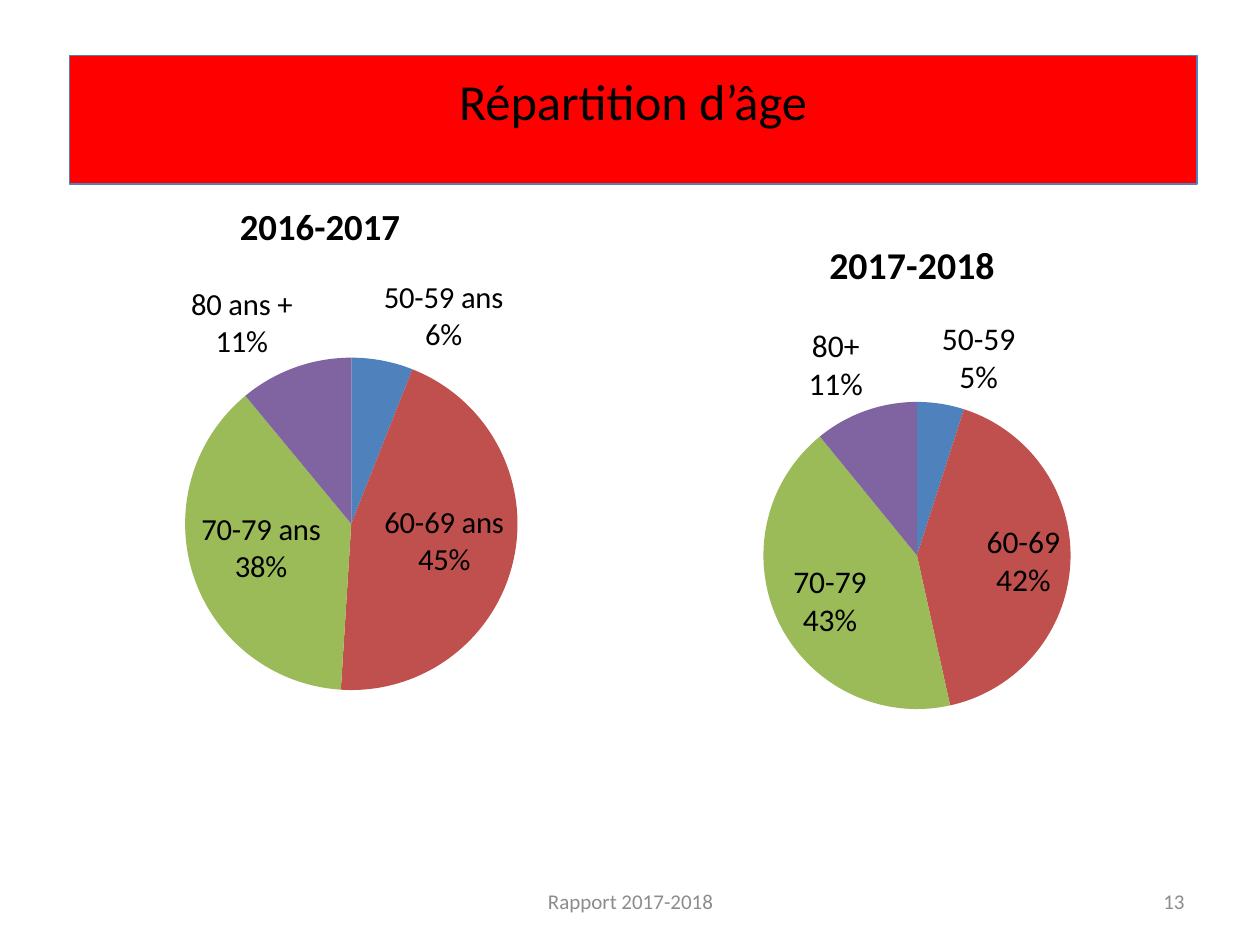
from lxml import etree
from pptx import Presentation
from pptx.chart.data import CategoryChartData
from pptx.dml.color import RGBColor
from pptx.enum import chart as ch, shapes, text
from pptx.oxml.ns import qn
from pptx.util import Inches, Pt

FONT = "Calibri"
BLACK = RGBColor(0x00, 0x00, 0x00)
GREY = RGBColor(0x8C, 0x8C, 0x8C)
RED = RGBColor(0xFF, 0x00, 0x00)
BLUE = RGBColor(0x4F, 0x81, 0xBD)
SLICES = [BLUE, RGBColor(0xC0, 0x50, 0x4D),
          RGBColor(0x9B, 0xBB, 0x59), RGBColor(0x80, 0x64, 0xA2)]


def style_font(font, size, color, bold=False):
    font.name, font.size, font.bold = FONT, Pt(size), bold
    font.color.rgb = color


def add_text(sp, content, size, color, align):
    tf = sp.text_frame
    tf.word_wrap = True
    tf.vertical_anchor = text.MSO_ANCHOR.MIDDLE
    p = tf.paragraphs[0]
    p.alignment = align
    r = p.add_run()
    r.text = content
    style_font(r.font, size, color)
    return p


def add_banner(s, box, title):
    sp = s.shapes.add_shape(shapes.MSO_SHAPE.RECTANGLE, *map(Inches, box))
    sp.shadow.inherit = False
    sp.fill.solid()
    sp.fill.fore_color.rgb = RED
    sp.line.color.rgb = BLUE
    sp.line.width = Pt(0.75)
    p = add_text(sp, title, 28.8, BLACK, text.PP_ALIGN.CENTER)
    p.add_line_break()


def add_footer(s, box, content, align):
    sp = s.shapes.add_textbox(*map(Inches, box))
    add_text(sp, content, 12, GREY, align)


def place_plot(chart, box, pie):
    """Fix the pie at (left, top, diameter) inches within the chart's box."""
    left, top, width, height = box
    x, y, size = pie
    fractions = {"x": x / width, "y": y / height,
                 "w": size / width, "h": size / height}
    area = chart._chartSpace.find(".//" + qn("c:plotArea"))
    for old in area.findall(qn("c:layout")):
        area.remove(old)
    layout = etree.Element(qn("c:layout"))
    manual = etree.SubElement(layout, qn("c:manualLayout"))
    etree.SubElement(manual, qn("c:layoutTarget"), val="inner")
    for side in "xy":
        etree.SubElement(manual, qn(f"c:{side}Mode"), val="edge")
    for key, value in fractions.items():
        etree.SubElement(manual, qn(f"c:{key}"), val=f"{value:.3f}")
    area.insert(0, layout)


def add_age_pie(s, box, pie, title, name, ages, values, size):
    data = CategoryChartData()
    data.categories = ages
    data.add_series(name, values)
    chart = s.shapes.add_chart(ch.XL_CHART_TYPE.PIE,
                               *map(Inches, box), data).chart
    style_font(chart.font, size, BLACK)
    chart.has_legend = False
    chart.has_title = True
    r = chart.chart_title.text_frame.paragraphs[0].add_run()
    r.text = title
    style_font(r.font, size * 1.2, BLACK, bold=True)
    chart.chart_title.include_in_layout = False

    plot = chart.plots[0]
    plot.vary_by_categories = True
    series = plot.series[0]
    for i, color in enumerate(SLICES):
        fill = series.points[i].format.fill
        fill.solid()
        fill.fore_color.rgb = color

    labels = series.data_labels
    style_font(labels.font, size, BLACK)
    labels.show_value = False
    labels.show_category_name = labels.show_percentage = True
    labels.number_format, labels.number_format_is_linked = "0%", False
    labels.position = ch.XL_LABEL_POSITION.BEST_FIT
    separator = etree.Element(qn("c:separator"))
    separator.text = "\n"
    labels._element.find(qn("c:showBubbleSize")).addnext(separator)
    place_plot(chart, box, pie)


def main():
    prs = Presentation()
    prs.slide_width, prs.slide_height = Inches(10), Inches(7.5)
    s = prs.slides.add_slide(prs.slide_layouts[6])
    add_banner(s, (0.55, 0.44, 8.95, 1.02), "Répartition d’âge")
    add_age_pie(s, (0, 1.39, 5.08, 4.72), (1.47, 1.45, 2.64),
                "2016-2017", "2016-2017",
                ["50-59 ans", "60-69 ans", "70-79 ans", "80 ans +"],
                [6, 45, 38, 11], 17.5)
    add_footer(s, (3.42, 6.95, 3.17, 0.4), "Rapport 2017-2018",
               text.PP_ALIGN.CENTER)
    add_footer(s, (7.17, 6.95, 2.33, 0.4), "13", text.PP_ALIGN.RIGHT)
    add_age_pie(s, (4.84, 1.7, 4.8, 4.27), (1.22, 1.49, 2.44),
                "2017-2018", "Series 1",
                ["50-59", "60-69", "70-79", "80+"],
                [5, 42, 43, 11], 18)
    prs.save("out.pptx")


if __name__ == "__main__":
    main()
